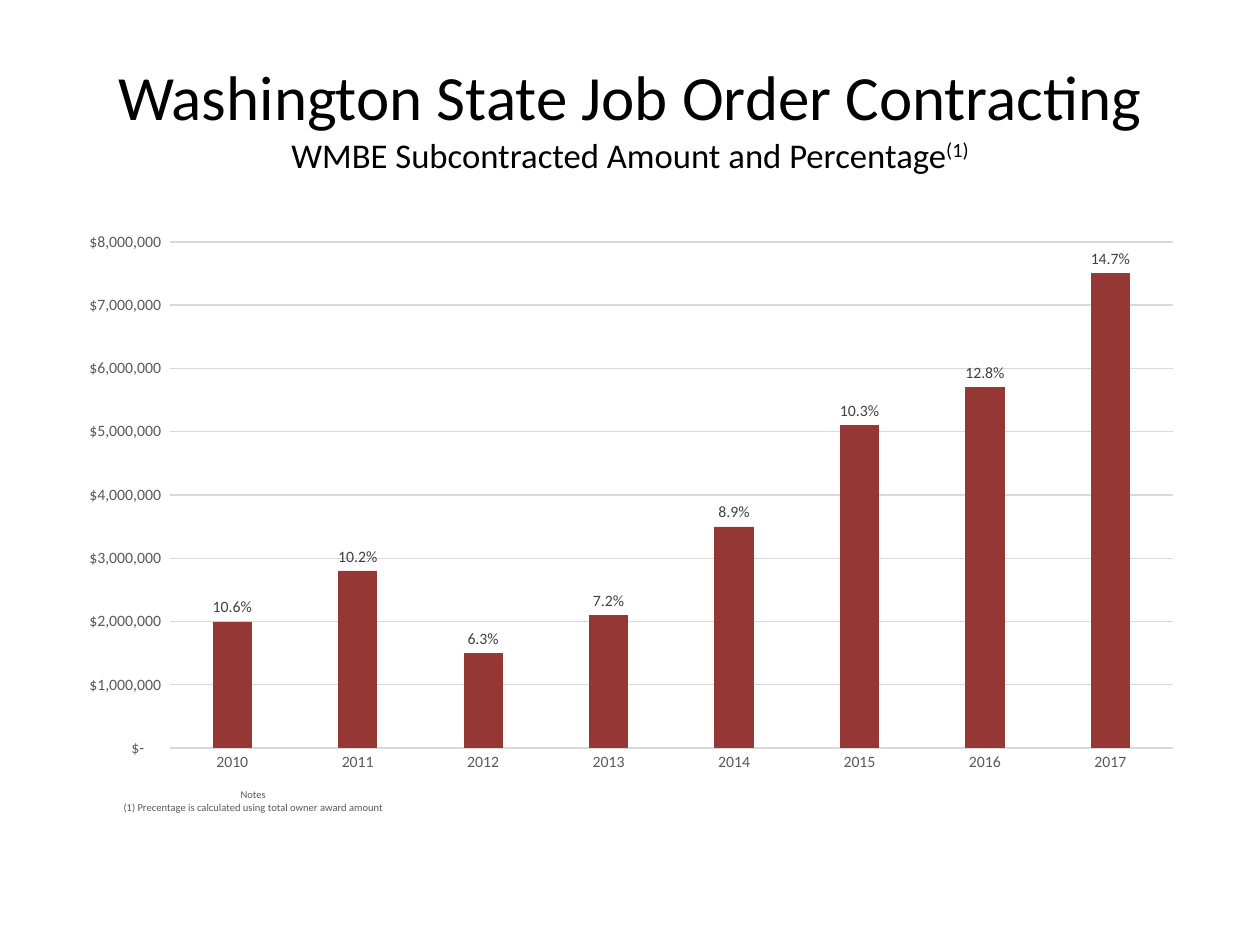
from dataclasses import dataclass
from typing import Optional

import lxml.etree
import pptx
import pptx.chart.data
import pptx.dml.color
import pptx.enum.chart
import pptx.enum.text
import pptx.oxml.ns
import pptx.util
from pptx.util import Cm

FONT = "Calibri"
COLORS = {
    "text": "000000",
    "axis": "595959",
    "label": "404040",
    "grid": "D9D9D9",
    "amount": "953735",
    "share": "C0504D",
}
DOLLARS = r'_("$"* #,##0_);_("$"* \(#,##0\);_("$"* "-"??_);_(@_)'
YEARS = [str(year) for year in range(2010, 2018)]


@dataclass
class Series:
    name: str
    values: list[float]
    color: str
    label_format: Optional[str] = None


SERIES = [
    Series("Series 1", [2000000, 2800000, 1500000, 2100000,
                        3500000, 5100000, 5700000, 7500000], "amount"),
    Series("Series 2", [0.106, 0.102, 0.063, 0.072,
                        0.089, 0.103, 0.128, 0.147], "share", "0.0%"),
]


def rgb(name: str) -> pptx.dml.color.RGBColor:
    return pptx.dml.color.RGBColor.from_string(COLORS[name])


def format_font(font, size: float, color: str) -> None:
    font.name = FONT
    font.size = pptx.util.Pt(size)
    font.bold = False
    font.color.rgb = rgb(color)


def add_text(p, text: str, *, size: float, color: str = "text", baseline: int = 0) -> None:
    """Add a centred run; baseline is a percentage of the text size."""
    p.alignment = pptx.enum.text.PP_ALIGN.CENTER
    r = p.add_run()
    r.text = text
    format_font(r.font, size, color)
    if baseline:
        r.font._element.set("baseline", str(baseline * 1000))


def set_layout(parent, index: int, inner: bool = False, **fractions: float) -> None:
    """Place a chart part by fractions of the chart area."""
    qn = pptx.oxml.ns.qn
    for old in parent.findall(qn("c:layout")):
        parent.remove(old)
    layout = lxml.etree.Element(qn("c:layout"))
    manual = lxml.etree.SubElement(layout, qn("c:manualLayout"))
    settings = {"layoutTarget": "inner"} if inner else {}
    settings.update(xMode="edge", yMode="edge", **fractions)
    for tag, value in settings.items():
        lxml.etree.SubElement(manual, qn(f"c:{tag}")).set("val", str(value))
    parent.insert(index, layout)


def style_axis(axis) -> None:
    axis.major_tick_mark = pptx.enum.chart.XL_TICK_MARK.NONE
    axis.minor_tick_mark = pptx.enum.chart.XL_TICK_MARK.NONE
    format_font(axis.tick_labels.font, 9, "axis")


def style_line(line) -> None:
    line.color.rgb = rgb("grid")
    line.width = pptx.util.Pt(0.75)


def style_series(series, item: Series) -> None:
    series.format.fill.solid()
    series.format.fill.fore_color.rgb = rgb(item.color)
    series.invert_if_negative = False
    if item.label_format:
        labels = series.data_labels
        labels.show_value = True
        labels.number_format = item.label_format
        labels.number_format_is_linked = False
        labels.position = pptx.enum.chart.XL_LABEL_POSITION.INSIDE_BASE
        format_font(labels.font, 9, "label")


def add_title(slide) -> None:
    tf = slide.shapes.add_textbox(Cm(1.27), Cm(0.76), Cm(22.86), Cm(3.18)).text_frame
    tf.word_wrap = True
    tf.vertical_anchor = pptx.enum.text.MSO_ANCHOR.MIDDLE
    p = tf.paragraphs[0]
    add_text(p, "Washington State Job Order Contracting", size=36)
    p.add_line_break()
    add_text(p, "WMBE Subcontracted Amount and Percentage", size=19.8)
    add_text(p, "(1)", size=19.8, baseline=30)


def add_amount_chart(slide) -> None:
    data = pptx.chart.data.CategoryChartData()
    data.categories = YEARS
    for item in SERIES:
        data.add_series(item.name, item.values)
    chart = slide.shapes.add_chart(
        pptx.enum.chart.XL_CHART_TYPE.COLUMN_STACKED,
        Cm(1.27), Cm(4.45), Cm(22.86), Cm(12.57), data).chart
    chart.has_legend = False
    chart.has_title = False
    format_font(chart.font, 10, "text")

    # Columns and percentage labels
    plot = chart.plots[0]
    plot.gap_width = 219
    plot.overlap = 100
    plot.vary_by_categories = False
    for series, item in zip(plot.series, SERIES):
        style_series(series, item)

    # Dollar axis
    amounts = chart.value_axis
    style_axis(amounts)
    amounts.minimum_scale, amounts.maximum_scale = 0, 8000000
    amounts.major_unit = 1000000
    amounts.tick_labels.number_format = DOLLARS
    amounts.tick_labels.number_format_is_linked = False
    amounts.format.line.fill.background()
    amounts.has_major_gridlines = True
    style_line(amounts.major_gridlines.format.line)

    # Year axis, with the notes as its title
    years = chart.category_axis
    style_axis(years)
    style_line(years.format.line)
    tf = years.axis_title.text_frame
    add_text(tf.paragraphs[0], "Notes", size=6, color="axis")
    add_text(tf.add_paragraph(),
             "(1) Precentage is calculated using total owner award amount",
             size=6, color="axis")

    # Places within the chart area
    set_layout(years.axis_title._element, 1, x=0.05, y=0.9)
    plot_area = chart._chartSpace.chart.plotArea
    set_layout(plot_area, 0, inner=True, x=0.094, y=0.034, w=0.885, h=0.812)


def main() -> None:
    prs = pptx.Presentation()
    prs.slide_width, prs.slide_height = Cm(25.4), Cm(19.05)
    slide = prs.slides.add_slide(prs.slide_layouts[6])
    add_title(slide)
    add_amount_chart(slide)
    prs.save("out.pptx")


if __name__ == "__main__":
    main()
